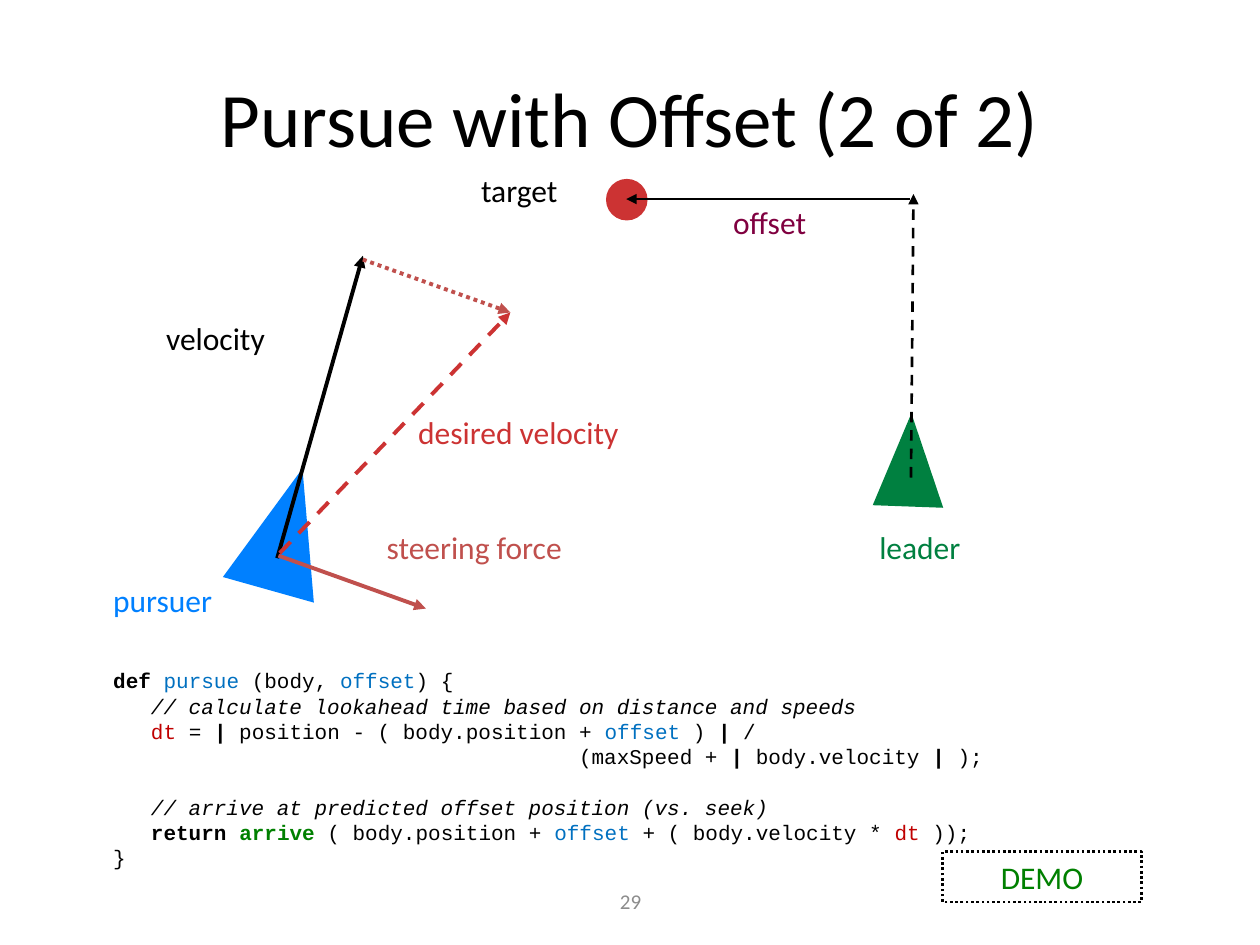
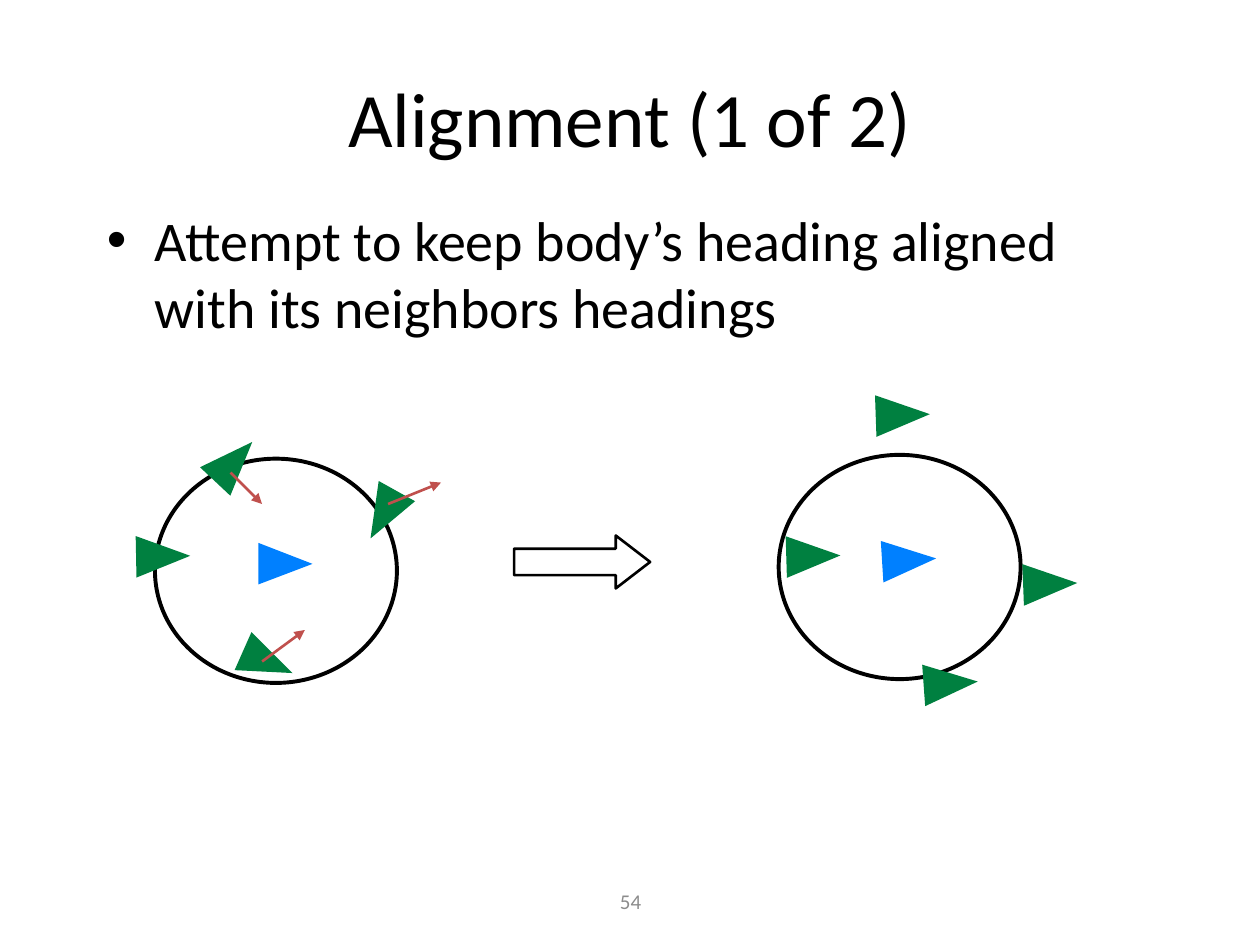
from lxml import etree
from pptx import Presentation
from pptx.dml.color import RGBColor
from pptx.enum.dml import MSO_LINE
from pptx.enum.shapes import MSO_CONNECTOR, MSO_SHAPE
from pptx.enum.text import MSO_ANCHOR, PP_ALIGN
from pptx.oxml.ns import qn
from pptx.util import Inches, Pt

TRIANGLE = MSO_SHAPE.ISOSCELES_TRIANGLE
ELLIPSE = MSO_SHAPE.OVAL
RIGHT_ARROW = MSO_SHAPE.RIGHT_ARROW
STRAIGHT = MSO_CONNECTOR.STRAIGHT
DASH, DOT = MSO_LINE.DASH, MSO_LINE.ROUND_DOT
LEFT, CENTER = PP_ALIGN.LEFT, PP_ALIGN.CENTER
TOP, MIDDLE = MSO_ANCHOR.TOP, MSO_ANCHOR.MIDDLE

BLACK = RGBColor(0x00, 0x00, 0x00)
GRAY = RGBColor(0x8C, 0x8C, 0x8C)
PURSUER_BLUE = RGBColor(0x00, 0x80, 0xFF)
LEADER_GREEN = RGBColor(0x00, 0x80, 0x40)
TARGET_RED = RGBColor(0xCC, 0x33, 0x33)
STEERING_RED = RGBColor(0xC0, 0x50, 0x4D)
OFFSET_PURPLE = RGBColor(0x80, 0x00, 0x40)
CODE_BLUE = RGBColor(0x00, 0x70, 0xC0)
CODE_RED = RGBColor(0xC0, 0x00, 0x00)
CODE_GREEN = RGBColor(0x00, 0x80, 0x00)


def add_text(slide, text, left, top, width, height, size=18, color=BLACK,
             font="Calibri", align=LEFT, anchor=TOP, bullet=None, line_pitch=None):
    """Text is a string or a list of lines; a line is a list of (text, style) runs."""
    box = slide.shapes.add_textbox(Inches(left), Inches(top), Inches(width), Inches(height))
    frame = box.text_frame
    frame.word_wrap = True
    frame.vertical_anchor = anchor
    lines = [[(text, {})]] if isinstance(text, str) else text
    for index, line in enumerate(lines):
        paragraph = frame.paragraphs[0] if index == 0 else frame.add_paragraph()
        paragraph.alignment = align
        if line_pitch:
            paragraph.line_spacing = Pt(line_pitch)
        if bullet:
            properties = paragraph._p.get_or_add_pPr()
            properties.set("marL", str(Inches(0.38)))
            properties.set("indent", str(-Inches(0.38)))
            etree.SubElement(properties, qn("a:buFont")).set("typeface", "Arial")
            etree.SubElement(properties, qn("a:buChar")).set("char", bullet)
        for run_text, style in line:
            run = paragraph.add_run()
            run.text = run_text
            run.font.name = font
            run.font.size = Pt(size)
            run.font.bold = style.get("bold", False)
            run.font.italic = style.get("italic", False)
            run.font.color.rgb = style.get("color", color)
    return box


def add_arrow(slide, start, end, color, width=1.5, dash=None):
    arrow = slide.shapes.add_connector(STRAIGHT, *map(Inches, start + end))
    arrow.line.color.rgb = color
    arrow.line.width = Pt(width)
    if dash:
        arrow.line.dash_style = dash
    etree.SubElement(arrow.line._get_or_add_ln(), qn("a:tailEnd")).set("type", "triangle")
    etree.SubElement(arrow._element.spPr, qn("a:effectLst"))


presentation = Presentation()
presentation.slide_width, presentation.slide_height = Inches(10), Inches(7.5)

slides = []
for title, number in [("Pursue with Offset (2 of 2)", "29"), ("Alignment (1 of 2)", "54")]:
    slide = presentation.slides.add_slide(presentation.slide_layouts[6])
    add_text(slide, number, 3.42, 6.95, 3.17, 0.4, size=12, color=GRAY,
             align=CENTER, anchor=MIDDLE)
    add_text(slide, title, 0.5, 0.3, 9, 1.25, size=44, align=CENTER, anchor=MIDDLE)
    slides.append(slide)
pursue_slide, alignment_slide = slides

# Filled bodies: slide, preset, left, top, width, height, rotation, colour
bodies = [
    (pursue_slide, TRIANGLE, 1.89, 3.7, 0.75, 1, 15.7, PURSUER_BLUE),
    (pursue_slide, TRIANGLE, 6.94, 3.28, 0.56, 0.74, 2.1, LEADER_GREEN),
    (pursue_slide, ELLIPSE, 4.81, 1.42, 0.33, 0.33, 0, TARGET_RED),
]
neighbors = [
    (1.69, 3.45, 43.2), (1.96, 5.04, 113.9), (1.13, 4.2, 88.9), (2.88, 3.87, 209.1),
    (7, 3.08, 88), (7.38, 5.21, 85.9), (6.29, 4.2, 88.3), (8.17, 4.42, 87.9),
]
pursuers = [(2.1, 4.26, 90.2), (7.05, 4.23, 86.5)]
for places, color in [(neighbors, LEADER_GREEN), (pursuers, PURSUER_BLUE)]:
    for left, top, rotation in places:
        bodies.append((alignment_slide, TRIANGLE, left, top, 0.33, 0.43, rotation, color))

# Outlines: neighbourhood circles and the arrow from before to after
outlines = [
    (ELLIPSE, 1.23, 3.64, 1.92, 1.78, 2.25),
    (ELLIPSE, 6.18, 3.61, 1.92, 1.78, 2.25),
    (RIGHT_ARROW, 4.08, 4.25, 1.08, 0.42, 1.5),
]
for preset, left, top, width, height, line_width in outlines:
    shape = alignment_slide.shapes.add_shape(
        preset, Inches(left), Inches(top), Inches(width), Inches(height))
    shape.shadow.inherit = False
    shape.fill.background()
    shape.line.color.rgb = BLACK
    shape.line.width = Pt(line_width)
    if preset == RIGHT_ARROW:
        shape.adjustments[1] = 0.65

for slide, preset, left, top, width, height, rotation, color in bodies:
    shape = slide.shapes.add_shape(
        preset, Inches(left), Inches(top), Inches(width), Inches(height))
    shape.shadow.inherit = False
    shape.rotation = rotation
    shape.fill.solid()
    shape.fill.fore_color.rgb = color
    shape.line.fill.background()

# Pursue with Offset: vectors, labels, code
for start, end, color, width, dash in [
    ((2.2, 4.43), (2.88, 2.03), BLACK, 2.25, None),
    ((2.88, 2.06), (4.05, 2.48), STEERING_RED, 2.25, DOT),
    ((2.22, 4.39), (4.05, 2.48), TARGET_RED, 2.25, DASH),
    ((2.21, 4.41), (3.38, 4.83), STEERING_RED, 2.25, None),
    ((7.23, 3.79), (7.25, 1.54), BLACK, 1.5, DASH),
    ((7.22, 1.58), (4.97, 1.58), BLACK, 1.5, None),
]:
    add_arrow(pursue_slide, start, end, color, width, dash)

for label, left, top, width, color in [
    ("velocity", 1.22, 2.48, 1.92, BLACK),
    ("desired velocity", 3.22, 3.23, 3.08, TARGET_RED),
    ("steering force", 2.97, 4.14, 3.33, STEERING_RED),
    ("leader", 6.88, 4.14, 1.42, LEADER_GREEN),
    ("pursuer", 0.8, 4.56, 1.5, PURSUER_BLUE),
    ("target", 3.72, 1.31, 1.42, BLACK),
    ("offset", 5.72, 1.56, 1.42, OFFSET_PURPLE),
]:
    add_text(pursue_slide, label, left, top, width, 0.5, color=color)

PLAIN, BOLD, COMMENT = {}, {"bold": True}, {"italic": True}
BLUE, RED = {"color": CODE_BLUE}, {"color": CODE_RED}
GREEN_BOLD = {"color": CODE_GREEN, "bold": True}
CODE_PITCH = 14.45
code_lines = [
    [("   def ", BOLD), ("pursue ", BLUE), ("(body, ", PLAIN), ("offset", BLUE), (") {", PLAIN)],
    [("      // calculate lookahead time based on distance and speeds", COMMENT)],
    [("      dt", RED), (" = ", PLAIN), ("| ", BOLD), ("position - ( body.position + ", PLAIN),
     ("offset ", BLUE), (") ", PLAIN), ("|", BOLD), (" /", PLAIN)],
    [(" " * 40 + "(maxSpeed + ", PLAIN), ("| ", BOLD), ("body.velocity ", PLAIN),
     ("| ", BOLD), (");", PLAIN)],
    [("      // arrive at predicted offset position (vs. seek)", COMMENT)],
    [("      return ", BOLD), ("arrive ", GREEN_BOLD), ("( body.position + ", PLAIN),
     ("offset ", BLUE), ("+ ( body.velocity * ", PLAIN), ("dt ", RED), ("));", PLAIN)],
    [("   }", PLAIN)],
]
code_box = add_text(pursue_slide, code_lines, 0.5, 5.25, 8.25, 1.72, size=12,
                    font="Courier New", line_pitch=CODE_PITCH)
code_box.text_frame.paragraphs[4].space_before = Pt(CODE_PITCH)

demo_box = add_text(pursue_slide, "DEMO", 7.48, 6.76, 1.58, 0.4, color=CODE_GREEN, align=CENTER)
demo_box.line.color.rgb = BLACK
demo_box.line.width = Pt(1.5)
demo_box.line.dash_style = DOT

# Alignment: statement and steering arrows
add_text(alignment_slide, "Attempt to keep body’s heading aligned with its neighbors headings",
         0.75, 1.58, 8.5, 1.33, size=32, bullet="•")
for start, end in [((1.83, 3.75), (2.08, 4)), ((3.08, 4), (3.5, 3.83)), ((2.08, 5.25), (2.42, 5))]:
    add_arrow(alignment_slide, start, end, STEERING_RED)

presentation.save("out.pptx")
